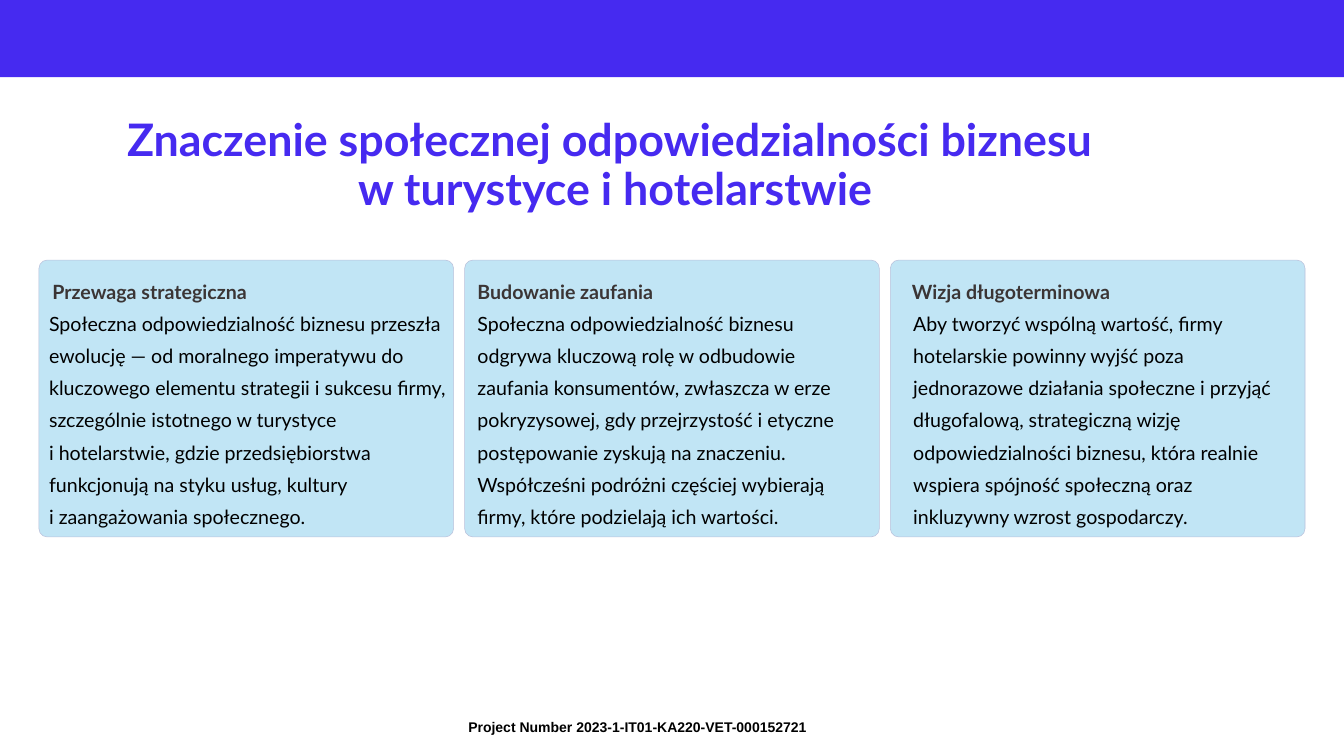
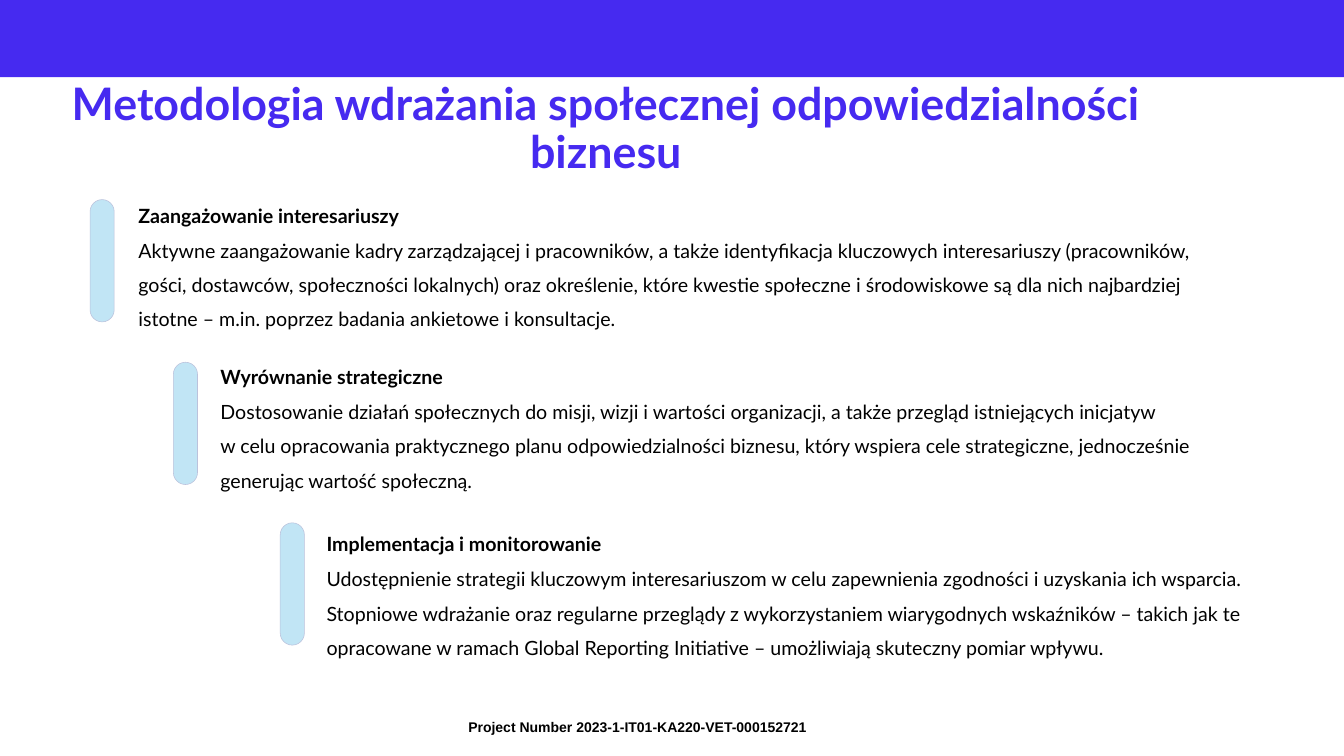
from pptx import Presentation
from pptx.dml.color import RGBColor
from pptx.enum.shapes import MSO_SHAPE
from pptx.enum.text import MSO_ANCHOR, MSO_AUTO_SIZE, PP_ALIGN
from pptx.util import Inches, Pt

# Shared look
WIDE, HIGH = 20, 11.25
BLUE = RGBColor(0x46, 0x2A, 0xF0)
SKY = RGBColor(0xC1, 0xE5, 0xF5)
EDGE = RGBColor(0xBB, 0xC2, 0xDC)
GREY = RGBColor(0x3B, 0x35, 0x35)
BLACK = RGBColor(0, 0, 0)
FOOTER = "Project Number 2023-1-IT01-KA220-VET-000152721"

# Content: title, its place, then the parts
VALUE = "Znaczenie społecznej odpowiedzialności biznesu \nw turystyce i hotelarstwie"
VALUE_AT = (0.53, 1.39, 17.25, 2.17)
# heading, body, heading indent, body indent, body width
CARDS = [
    ("Przewaga strategiczna",
     "Społeczna odpowiedzialność biznesu przeszła ewolucję — od moralnego "
     "imperatywu do kluczowego elementu strategii i sukcesu firmy, szczególnie "
     "istotnego w turystyce\ni hotelarstwie, gdzie przedsiębiorstwa funkcjonują "
     "na styku usług, kultury \ni zaangażowania społecznego.",
     0.2, 0.15, 6.05),
    ("Budowanie zaufania",
     "Społeczna odpowiedzialność biznesu odgrywa kluczową rolę w odbudowie "
     "zaufania konsumentów, zwłaszcza w erze pokryzysowej, gdy przejrzystość "
     "i etyczne postępowanie zyskują na znaczeniu. Współcześni podróżni częściej "
     "wybierają firmy, które podzielają ich wartości.",
     0.19, 0.19, 5.48),
    ("Wizja długoterminowa",
     "Aby tworzyć wspólną wartość, firmy hotelarskie powinny wyjść poza "
     "jednorazowe działania społeczne i przyjąć długofalową, strategiczną wizję "
     "odpowiedzialności biznesu, która realnie wspiera spójność społeczną oraz "
     "inkluzywny wzrost gospodarczy.",
     0.32, 0.34, 5.64),
]

METHOD = "Metodologia wdrażania społecznej odpowiedzialności biznesu"
METHOD_AT = (0.39, 1.2, 17.25, 1.46)
# heading, body, bar left, bar top, text left, text top, text width
STEPS = [
    ("Zaangażowanie interesariuszy",
     "Aktywne zaangażowanie kadry zarządzającej i pracowników, a także "
     "identyfikacja kluczowych interesariuszy (pracowników, gości, dostawców, "
     "społeczności lokalnych) oraz określenie, które kwestie społeczne "
     "i środowiskowe są dla nich najbardziej istotne – m.in. poprzez badania "
     "ankietowe i konsultacje.",
     1.34, 2.97, 2.06, 2.86, 16.29),
    ("Wyrównanie strategiczne",
     "Dostosowanie działań społecznych do misji, wizji i wartości organizacji, "
     "a także przegląd istniejących inicjatyw \nw celu opracowania praktycznego "
     "planu odpowiedzialności biznesu, który wspiera cele strategiczne, "
     "jednocześnie generując wartość społeczną.",
     2.58, 5.39, 3.28, 5.26, 14.63),
    ("Implementacja i monitorowanie",
     "Udostępnienie strategii kluczowym interesariuszom w celu zapewnienia "
     "zgodności i uzyskania ich wsparcia. Stopniowe wdrażanie oraz regularne "
     "przeglądy z wykorzystaniem wiarygodnych wskaźników – takich jak te "
     "opracowane w ramach Global Reporting Initiative – umożliwiają skuteczny "
     "pomiar wpływu.",
     4.17, 7.78, 4.86, 7.75, 14.97),
]


def inches(at):
    return [Inches(n) for n in at]


def write(frame, text, size=21, color=BLACK, bold=False, font="Lato",
          lead=None, align=PP_ALIGN.LEFT, inset=0, wrap=True):
    frame.word_wrap = wrap
    frame.margin_left = frame.margin_right = Inches(inset)
    frame.margin_top = frame.margin_bottom = Inches(inset / 2)
    para = frame.paragraphs[0]
    para.text = text
    para.alignment = align
    para.line_spacing = lead
    for run in para.runs:
        run.font.name, run.font.size = font, Pt(size)
        run.font.bold, run.font.color.rgb = bold, color


def add_text(slide, at, text, **look):
    frame = slide.shapes.add_textbox(*inches(at)).text_frame
    write(frame, text, **look)
    return frame


def add_box(slide, at, fill, edge=None, bend=None):
    kind = MSO_SHAPE.RECTANGLE if bend is None else MSO_SHAPE.ROUNDED_RECTANGLE
    box = slide.shapes.add_shape(kind, *inches(at))
    box.shadow.inherit = False
    box.fill.solid()
    box.fill.fore_color.rgb = fill
    if edge is None:
        box.line.fill.background()
    else:
        box.line.color.rgb, box.line.width = edge, Pt(0.6)
    if bend is not None:
        box.adjustments[0] = bend


def add_page(deck, text, at):
    """Slide with the top band, the footer and the title."""
    slide = deck.slides.add_slide(deck.slide_layouts[5])
    add_box(slide, (0, -0.02, WIDE, 1.17), BLUE)
    foot = add_text(slide, (6.87, 10.65, 5.31, 0.35), FOOTER, size=15,
                    bold=True, font="Arial", inset=0.1, wrap=False)
    foot.auto_size = MSO_AUTO_SIZE.SHAPE_TO_FIT_TEXT
    title = slide.shapes.title
    title.left, title.top, title.width, title.height = inches(at)
    title.text_frame.auto_size = MSO_AUTO_SIZE.NONE
    title.text_frame.vertical_anchor = MSO_ANCHOR.MIDDLE
    write(title.text_frame, text, size=48, color=BLUE, bold=True,
          lead=0.9, align=PP_ALIGN.CENTER, inset=0.1)
    return slide


def add_cards(slide):
    side, top, wide, high = 0.58, 3.87, 6.17, 4.12
    step = (WIDE - 2 * side - wide) / (len(CARDS) - 1)
    for col, (head, body, dent, shift, span) in enumerate(CARDS):
        left = side + col * step
        add_box(slide, (left, top, wide, high), SKY, EDGE, 0.03)
        add_text(slide, (left + dent, top + 0.15, 4, 0.5), head,
                 color=GREY, bold=True, lead=Pt(35.2))
        add_text(slide, (left + shift, top + 0.64, span, 3.38), body,
                 lead=Pt(34.5))


def add_steps(slide):
    for head, body, left, top, start, line, span in STEPS:
        add_box(slide, (left, top, 0.36, 1.82), SKY, EDGE, 0.5)
        add_text(slide, (start, line, 7, 0.53), head, bold=True, lead=Pt(37.5))
        add_text(slide, (start, line + 0.53, span, 1.54), body, lead=Pt(36.8))


def main():
    deck = Presentation()
    deck.slide_width, deck.slide_height = Inches(WIDE), Inches(HIGH)
    add_cards(add_page(deck, VALUE, VALUE_AT))
    add_steps(add_page(deck, METHOD, METHOD_AT))
    deck.save("out.pptx")


if __name__ == "__main__":
    main()
